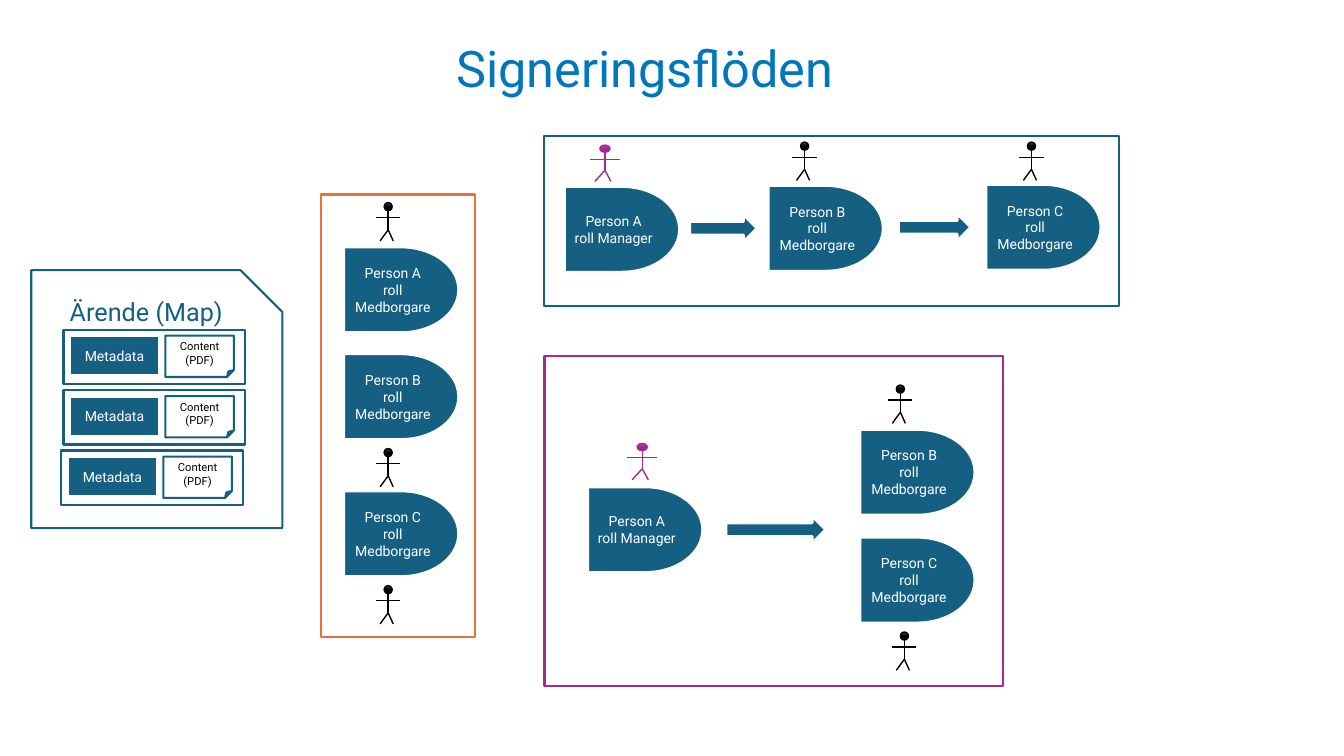
"""Draws the slide on signing flows between a manager and citizens."""
from copy import deepcopy
from dataclasses import dataclass

from pptx import Presentation
from pptx.dml.color import RGBColor
from pptx.enum.shapes import MSO_CONNECTOR as Link, MSO_SHAPE as Shape
from pptx.enum.text import MSO_ANCHOR as Anchor, MSO_AUTO_SIZE as AutoSize, PP_ALIGN as Align
from pptx.oxml.ns import qn
from pptx.oxml.xmlchemy import OxmlElement
from pptx.util import Pt

PX = 9144


@dataclass(frozen=True)
class Theme:
    font: str = "Roboto"
    white: str = "FFFFFF"
    black: str = "000000"
    teal: str = "156082"
    purple: str = "A02B93"
    orange: str = "E97132"
    title: str = "0077BC"
    citizen_head: tuple = ("4B4B4B", "000000", "000000")
    manager_head: tuple = ("AC53A0", "A62598", "991C8B")
    title_size: int = 36
    case_size: int = 18
    label_size: int = 10
    content_size: int = 8
    frame_line: float = 1.5
    block_line: float = 2
    figure_line: float = 1


class FlowSlide:
    def __init__(self, slide, theme):
        self.shapes = slide.shapes
        self.theme = theme

    def label(self, frame, words, size, color):
        frame.word_wrap = True
        line = frame.paragraphs[0]
        line.alignment = Align.CENTER
        run = line.add_run()
        run.text = words
        run.font.name = self.theme.font
        run.font.size = Pt(size)
        run.font.color.rgb = RGBColor.from_string(color)

    def heading(self, words, *box):
        area = self.shapes.add_textbox(*(v * PX for v in box))
        area.text_frame.auto_size = AutoSize.SHAPE_TO_FIT_TEXT
        self.label(area.text_frame, words, self.theme.title_size, self.theme.title)

    def outline(self, kind, box, line, width):
        shape = self.shapes.add_shape(kind, *(v * PX for v in box))
        shape.shadow.inherit = False
        shape.line.color.rgb = RGBColor.from_string(line)
        shape.line.width = Pt(width)
        return shape

    def frame(self, box, color, kind=Shape.RECTANGLE):
        shape = self.outline(kind, box, color, self.theme.frame_line)
        shape.fill.solid()
        shape.fill.fore_color.rgb = RGBColor.from_string(self.theme.white)
        return shape

    def block(self, kind, box, words=""):
        shape = self.outline(kind, box, self.theme.white, self.theme.block_line)
        shape.fill.solid()
        shape.fill.fore_color.rgb = RGBColor.from_string(self.theme.teal)
        if words:
            shape.text_frame.vertical_anchor = Anchor.MIDDLE
            self.label(shape.text_frame, words, self.theme.label_size, self.theme.white)

    def person(self, x, y, letter, role="Medborgare"):
        self.block(Shape.FLOWCHART_DELAY, (x, y, 114, 85), f"Person {letter} roll {role}")

    def arrow(self, x, y, width):
        self.block(Shape.RIGHT_ARROW, (x, y, width, 27))

    def limb(self, x1, y1, x2, y2, color):
        limb = self.shapes.add_connector(Link.STRAIGHT, *(v * PX for v in (x1, y1, x2, y2)))
        limb.line.color.rgb = RGBColor.from_string(color)
        limb.line.width = Pt(self.theme.figure_line)
        limb.element.spPr.append(OxmlElement("a:effectLst"))

    def figure(self, x, y, manager=False):
        theme = self.theme
        if manager:
            color, shades = theme.purple, theme.manager_head
            head_w, head_h, arm, reach, hip, foot, left, right = 10, 7, 14, 15, 25, 36, 10, 6
        else:
            color, shades = theme.black, theme.citizen_head
            head_w, head_h, arm, reach, hip, foot, left, right = 8, 8, 15, 12, 27, 38, 8, 5
        self.limb(x - reach, y + arm, x + reach, y + arm, color)
        self.limb(x, y + head_h, x, y + hip, color)
        for step in (-left, right):
            self.limb(x, y + hip, x + step, y + foot, color)
        head = self.outline(Shape.OVAL, (x - head_w // 2, y, head_w, head_h),
                            color, theme.figure_line)
        head.fill.gradient()
        head.fill.gradient_angle = 270
        stops = head.element.spPr.find(qn("a:gradFill")).find(qn("a:gsLst"))
        stops.insert(1, deepcopy(stops[0]))
        for stop, place, shade in zip(head.fill.gradient_stops, (0, 0.5, 1), shades):
            stop.position = place
            stop.color.rgb = RGBColor.from_string(shade)

    def case(self, words, *box):
        folder = self.frame(box, self.theme.teal, Shape.SNIP_1_RECTANGLE)
        folder.text_frame.vertical_anchor = Anchor.TOP
        self.label(folder.text_frame, words, self.theme.case_size, self.theme.teal)

    def document(self, x, y):
        self.frame((x, y, 180, 54), self.theme.teal)
        content = self.frame((x + 101, y + 6, 68, 41), self.theme.teal, Shape.FOLDED_CORNER)
        content.text_frame.vertical_anchor = Anchor.MIDDLE
        self.label(content.text_frame, "Content (PDF)", self.theme.content_size, self.theme.black)
        self.block(Shape.RECTANGLE, (x + 6, y + 6, 89, 40), "Metadata")


def main():
    deck = Presentation()
    deck.slide_width, deck.slide_height = 1333 * PX, 750 * PX
    theme = Theme()
    flows = FlowSlide(deck.slides.add_slide(deck.slide_layouts[6]), theme)

    flows.heading("Signeringsflöden", 232, 32, 815, 71)

    flows.case("Ärende (Map)", 31, 268, 249, 256)
    for row, x in enumerate((63, 63, 61)):
        flows.document(x, 327 + 60 * row)

    flows.frame((318, 193, 153, 439), theme.orange)
    for letter, y in zip("ABC", (245, 351, 487)):
        flows.person(341, y, letter)
    for y in (201, 445, 581):
        flows.figure(385, y)

    flows.frame((540, 135, 570, 169), theme.teal)
    flows.person(560, 185, "A", "Manager")
    flows.person(762, 184, "B")
    flows.person(978, 183, "C")
    flows.arrow(684, 213, 67)
    flows.arrow(891, 212, 72)
    flows.figure(600, 144, manager=True)
    for x in (798, 1023):
        flows.figure(x, 141)

    flows.frame((540, 353, 455, 328), theme.purple)
    flows.person(583, 483, "A", "Manager")
    flows.person(853, 426, "B")
    flows.person(853, 533, "C")
    flows.arrow(720, 512, 99)
    flows.figure(637, 440, manager=True)
    flows.figure(893, 382)
    flows.figure(897, 627)

    deck.save("out.pptx")


if __name__ == "__main__":
    main()
